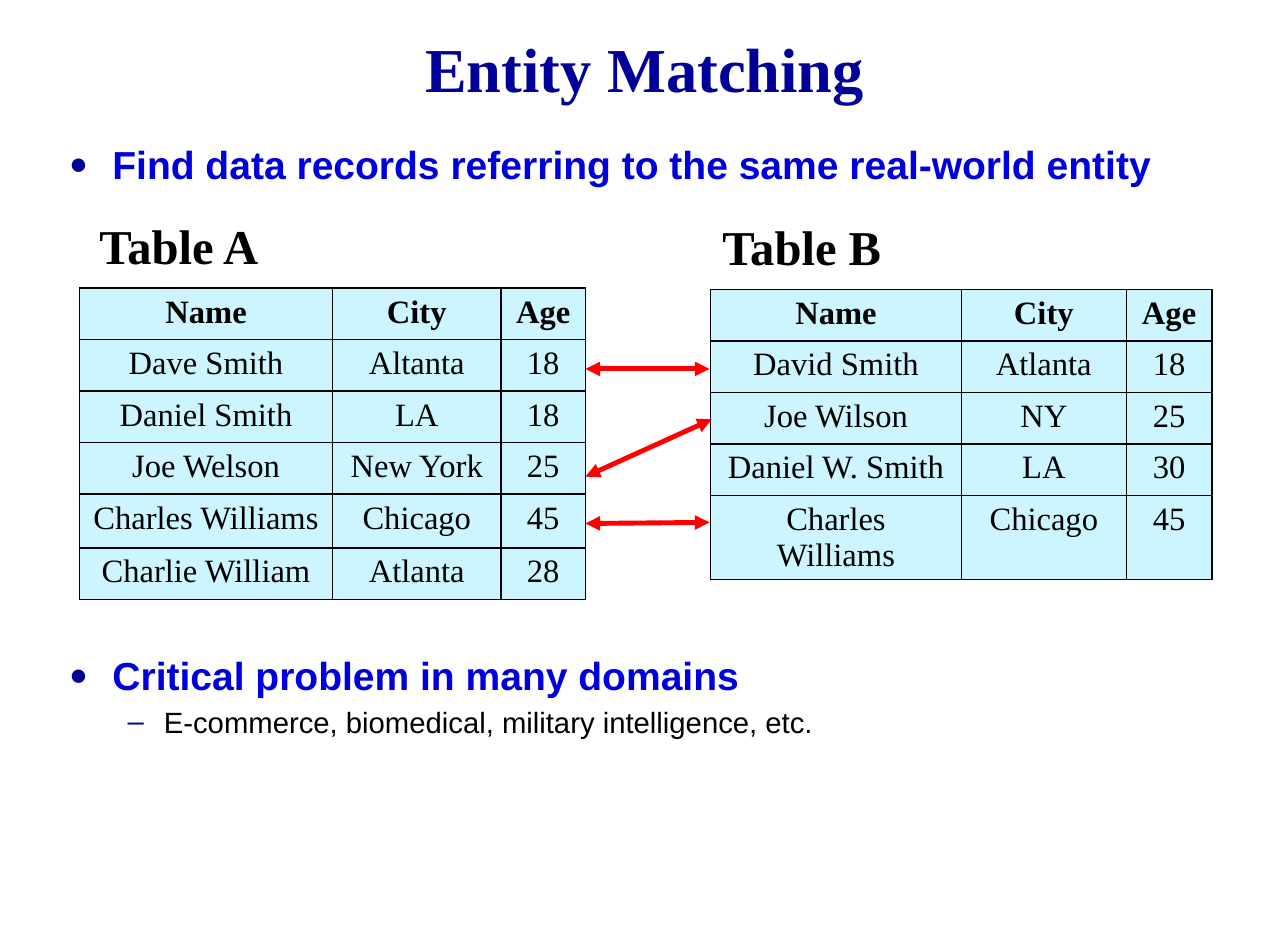
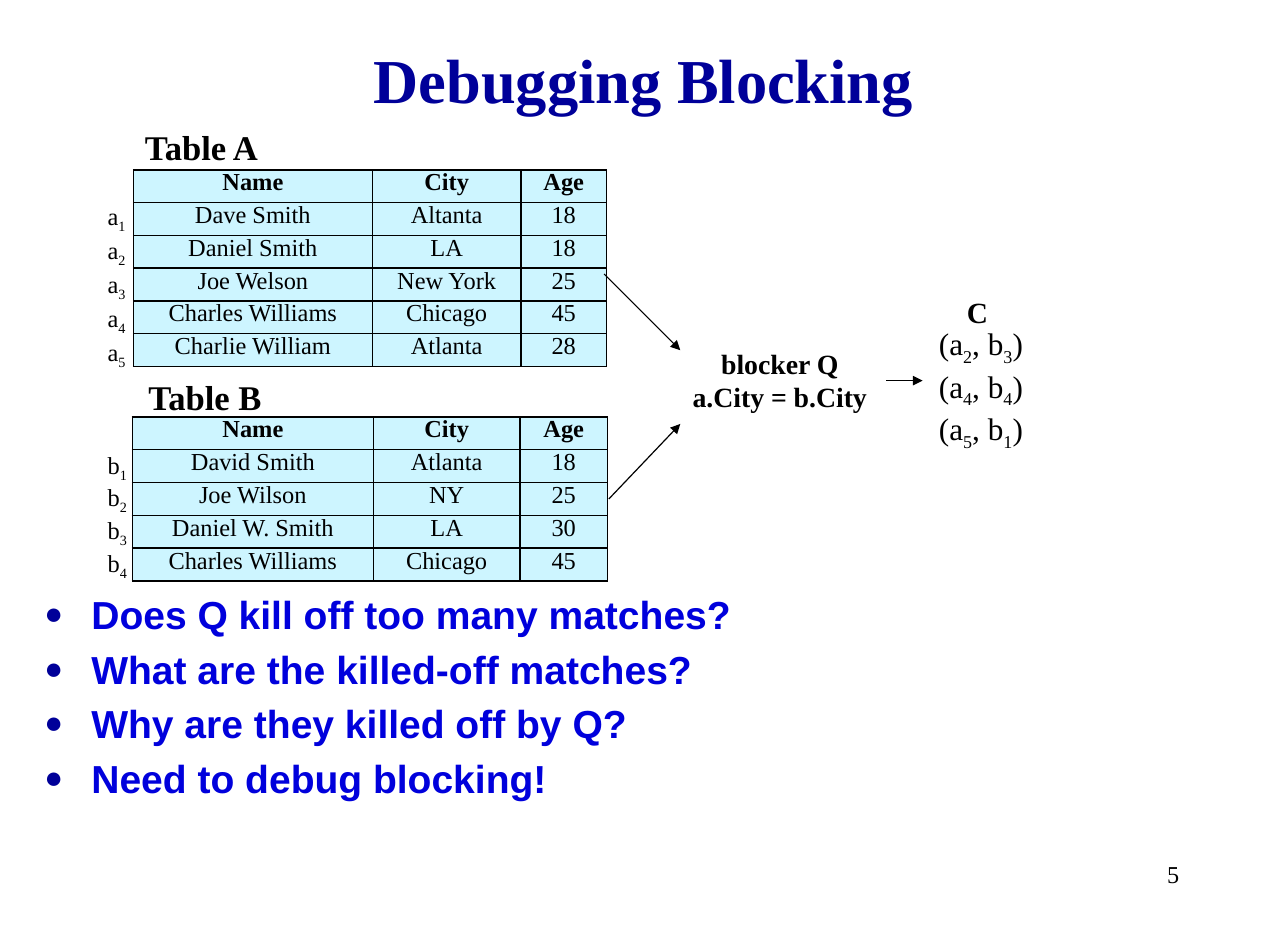
from lxml import etree
from pptx import Presentation
from pptx.dml.color import RGBColor
from pptx.enum.shapes import MSO_CONNECTOR
from pptx.enum.text import MSO_ANCHOR, MSO_AUTO_SIZE, PP_ALIGN
from pptx.oxml.ns import qn
from pptx.util import Inches, Pt

LEFT, CENTER, RIGHT = PP_ALIGN.LEFT, PP_ALIGN.CENTER, PP_ALIGN.RIGHT
TOP, MIDDLE = MSO_ANCHOR.TOP, MSO_ANCHOR.MIDDLE
NO_FIT = MSO_AUTO_SIZE.NONE
STRAIGHT = MSO_CONNECTOR.STRAIGHT

WIDTH, HEIGHT = Inches(11), Inches(8)
COL, ROW = WIDTH // 11, HEIGHT // 8
SERIF, SANS = "Times New Roman", "Arial"
NAVY, BLUE, BLACK, RED, ICE = "000099", "0000DC", "000000", "FF0000", "CDF5FF"

HEADER = ("Name", "City", "Age")
TABLE_A = [
    HEADER,
    ("Dave Smith", "Altanta", "18"),
    ("Daniel Smith", "LA", "18"),
    ("Joe Welson", "New York", "25"),
    ("Charles Williams", "Chicago", "45"),
    ("Charlie William", "Atlanta", "28"),
]
TABLE_B = [
    HEADER,
    ("David Smith", "Atlanta", "18"),
    ("Joe Wilson", "NY", "25"),
    ("Daniel W. Smith", "LA", "30"),
    ("Charles Williams", "Chicago", "45"),
]


def rgb(value):
    return RGBColor.from_string(value)


def cols(n):
    return round(n * COL)


def rows(n):
    return round(n * ROW)


def box(x, y, w, h):
    return cols(x), rows(y), cols(w), rows(h)


def sub(parent, tag, **attrs):
    return etree.SubElement(parent, qn(tag), attrs)


def add_runs(p, text, size, color=BLACK, font=SERIF, bold=False):
    for i, part in enumerate(text.split("_")):
        if not part:
            continue
        r = p.add_run()
        r.text = part
        r.font.name, r.font.size, r.font.bold = font, Pt(size), bold
        r.font.color.rgb = rgb(color)
        if i % 2:
            r._r.get_or_add_rPr().set("baseline", "-25000")


def place(sp, at, anchor=TOP, inset=(0.1, 0.05)):
    sp.left, sp.top, sp.width, sp.height = box(*at)
    tf = sp.text_frame
    tf.word_wrap, tf.auto_size, tf.vertical_anchor = True, NO_FIT, anchor
    tf.margin_left = tf.margin_right = Inches(inset[0])
    tf.margin_top = tf.margin_bottom = Inches(inset[1])
    return tf


def paragraphs(tf, lines):
    for i, line in enumerate(lines):
        yield (tf.add_paragraph() if i else tf.paragraphs[0]), line


def set_title(s, text, at):
    p = place(s.shapes.title, at, MIDDLE).paragraphs[0]
    p.alignment = CENTER
    add_runs(p, text, 38.4, NAVY, bold=True)


def set_bullet(p, char, indent, hang, percent):
    pPr = p._p.get_or_add_pPr()
    pPr.set("marL", str(Inches(indent)))
    pPr.set("indent", str(-Inches(hang)))
    sub(sub(pPr, "a:spcBef"), "a:spcPct", val="20000")
    sub(sub(pPr, "a:buClr"), "a:srgbClr", val=NAVY)
    sub(pPr, "a:buSzPct", val=str(percent * 1000))
    sub(pPr, "a:buFont", typeface=SANS)
    sub(pPr, "a:buChar", char=char)


def fill_list(sp, at, items, indent, inset=(0.1, 0.05)):
    for p, (level, text) in paragraphs(place(sp, at, inset=inset), items):
        p.alignment = LEFT
        if level:
            p.level = level
            set_bullet(p, "–", 0.81, 0.31, 100)
            add_runs(p, text, 18, font=SANS)
        else:
            set_bullet(p, "●", indent, indent, 80)
            add_runs(p, text, 24, BLUE, SANS, True)


def add_text(s, at, lines, size, bold=False, align=LEFT):
    tf = place(s.shapes.add_textbox(*box(*at)), at)
    for p, line in paragraphs(tf, lines):
        p.alignment = align
        add_runs(p, line, size, bold=bold)


def set_borders(cell):
    tcPr = cell._tc.get_or_add_tcPr()
    for side in ("a:lnL", "a:lnR", "a:lnT", "a:lnB"):
        ln = sub(tcPr, side, w=str(Pt(1)))
        sub(sub(ln, "a:solidFill"), "a:srgbClr", val=BLACK)


def add_records(s, x, y, widths, heights, records, size, spacing=1.0):
    at = box(x, y, sum(widths), sum(heights))
    table = s.shapes.add_table(len(records), len(widths), *at).table
    table.first_row = table.horz_banding = False
    for column, width in zip(table.columns, widths):
        column.width = cols(width)
    for i, (row, height) in enumerate(zip(table.rows, heights)):
        row.height = rows(height)
        for cell, text in zip(row.cells, records[i]):
            set_borders(cell)
            cell.fill.solid()
            cell.fill.fore_color.rgb = rgb(ICE)
            cell.margin_left = cell.margin_right = Inches(0.11)
            cell.margin_top = cell.margin_bottom = Inches(0.05)
            p = cell.text_frame.paragraphs[0]
            p.alignment, p.line_spacing = CENTER, spacing
            add_runs(p, text, size, bold=i == 0)


def add_arrow(s, start, end, color, weight, ends):
    c = s.shapes.add_connector(STRAIGHT, cols(start[0]), rows(start[1]),
                               cols(end[0]), rows(end[1]))
    c.line.color.rgb, c.line.width = rgb(color), Pt(weight)
    ln = c.line._get_or_add_ln()
    for tag in ends:
        sub(ln, tag, type="triangle")
    sub(c._element.spPr, "a:effectLst")


def add_row_labels(s, letter, count, top, step):
    for i in range(count):
        add_text(s, (0.82, top + i * step, 0.62, 0.35), [f"{letter}_{i + 1}_"], 15)


def build_matching(prs):
    s = prs.slides.add_slide(prs.slide_layouts[3])
    set_title(s, "Entity Matching", (0.97, 0.18, 9.07, 0.8))
    lists = (
        (1, 1.14, 0.87, [(0, "Find data records referring to the same real-world entity")]),
        (2, 5.5, 1.49, [(0, "Critical problem in many domains"),
                        (1, "E-commerce, biomedical, military intelligence, etc.")]),
    )
    for idx, top, height, items in lists:
        fill_list(s.placeholders[idx], (0.46, top, 9.95, height), items, 0.37, (0.13, 0.06))
    add_text(s, (0.75, 1.79, 1.85, 0.6), ["Table A"], 29.9, True)
    add_text(s, (6.07, 1.8, 1.85, 0.6), ["Table B"], 29.9, True)
    add_records(s, 0.68, 2.46, (2.16, 1.44, 0.72),
                [0.44] * 4 + [0.46, 0.44], TABLE_A, 20)
    add_records(s, 6.07, 2.47, (2.14, 1.41, 0.73), [0.44] * 5, TABLE_B, 20)
    for start, end in (((5, 3.15), (6.06, 3.15)),
                       ((5, 4.07), (6.08, 3.58)),
                       ((5, 4.47), (6.06, 4.46))):
        add_arrow(s, start, end, RED, 3, ("a:headEnd", "a:tailEnd"))


def build_debugging(prs):
    s = prs.slides.add_slide(prs.slide_layouts[1])
    set_title(s, "Debugging Blocking", (0.82, 0.27, 9.35, 0.8))
    questions = ("Does Q kill off too many matches?", "What are the killed-off matches?",
                 "Why are they killed off by Q?", "Need to debug blocking!")
    fill_list(s.placeholders[1], (0.28, 4.99, 10.45, 2.12),
              [(0, q) for q in questions], 0.4)
    add_text(s, (1.14, 1.03, 1.76, 0.46), ["Table A"], 21.3, True)
    add_text(s, (1.17, 3.16, 1.76, 0.46), ["Table B"], 21.3, True)
    add_records(s, 1.14, 1.45, (2.04, 1.27, 0.73), [0.28] * 6, TABLE_A, 15, 0.7)
    add_records(s, 1.13, 3.56, (2.06, 1.25, 0.75), [0.28] * 5, TABLE_B, 15, 0.7)
    add_row_labels(s, "a", 5, 1.67, 0.29)
    add_row_labels(s, "b", 4, 3.79, 0.28)
    add_text(s, (5.71, 2.91, 1.9, 0.68), ["blocker Q", "a.City = b.City"], 17.1, True, CENTER)
    add_text(s, (8.16, 2.46, 0.5, 0.4), ["C"], 18, True)
    add_text(s, (7.92, 2.72, 0.99, 1.07),
             [f"(a_{a}_, b_{b}_)" for a, b in ((2, 3), (4, 4), (5, 1))], 19.2)
    for start, end in (((5.16, 2.34), (5.81, 2.99)),
                       ((5.2, 4.26), (5.81, 3.62)),
                       ((7.57, 3.25), (7.88, 3.25))):
        add_arrow(s, start, end, BLACK, 0.75, ("a:tailEnd",))
    add_text(s, (7.88, 7.29, 2.29, 0.53), ["5"], 14.9, align=RIGHT)


def main():
    prs = Presentation()
    prs.slide_width, prs.slide_height = WIDTH, HEIGHT
    build_matching(prs)
    build_debugging(prs)
    prs.save("out.pptx")


if __name__ == "__main__":
    main()
